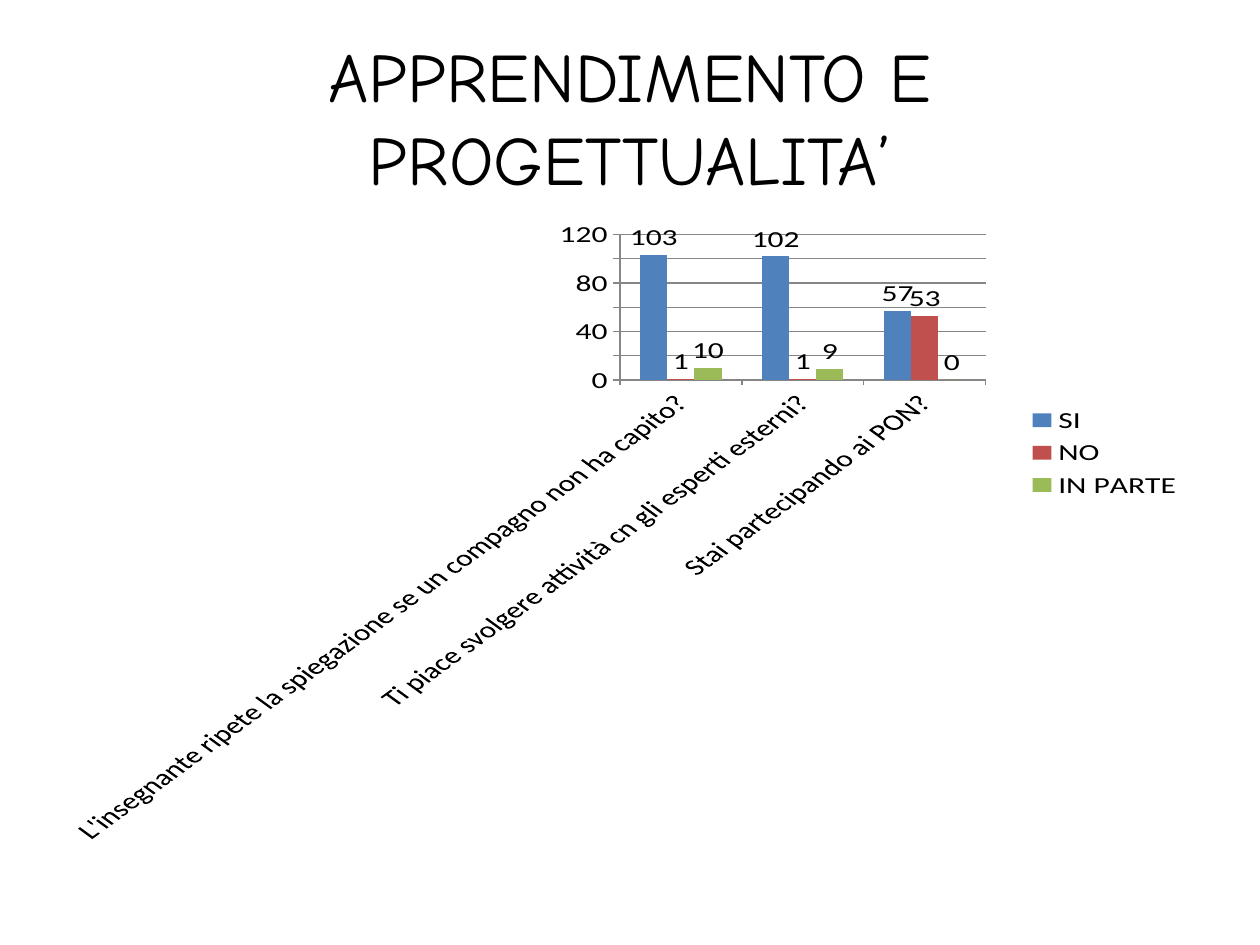
from pptx import Presentation
from pptx.chart.data import CategoryChartData as ChartData
from pptx.dml.color import RGBColor
from pptx.enum.chart import XL_CHART_TYPE as Kind, XL_LABEL_POSITION as Spot
from pptx.enum.chart import XL_LEGEND_POSITION as Side, XL_TICK_MARK as Tick
from pptx.enum.text import MSO_ANCHOR as Anchor, PP_ALIGN as Align
from pptx.util import Cm, Pt

BLACK = RGBColor(0x00, 0x00, 0x00)
GREY = RGBColor(0x86, 0x86, 0x86)
BLUE = RGBColor(0x4F, 0x81, 0xBD)
RED = RGBColor(0xC0, 0x50, 0x4D)
GREEN = RGBColor(0x9B, 0xBB, 0x59)

LEFT, WIDTH = Cm(1.27), Cm(22.86)

ASKS = [
    "L'insegnante ripete la spiegazione se un compagno non ha capito?",
    "Ti piace svolgere attività cn gli esperti esterni?",
    "Stai partecipando ai PON?",
]
REPLIES = [
    ("SI", (103, 102, 57), BLUE),
    ("NO", (1, 1, 53), RED),
    ("IN PARTE", (10, 9, 0), GREEN),
]


def add_title(slide, text):
    box = slide.shapes.add_textbox(LEFT, Cm(0.76), WIDTH, Cm(3.18))
    frame = box.text_frame
    frame.word_wrap = True
    frame.vertical_anchor = Anchor.MIDDLE
    para = frame.paragraphs[0]
    para.alignment = Align.CENTER
    run = para.add_run()
    run.text = text
    run.font.name = "Comic Neue"
    run.font.size = Pt(39.6)
    run.font.color.rgb = BLACK


def style_axis(axis):
    axis.major_tick_mark = Tick.OUTSIDE
    axis.minor_tick_mark = Tick.NONE
    axis.format.line.color.rgb = GREY


def style_bars(bars, color):
    bars.format.fill.solid()
    bars.format.fill.fore_color.rgb = color
    bars.invert_if_negative = False
    tags = bars.data_labels
    tags.show_value = True
    tags.position = Spot.OUTSIDE_END


def add_columns(slide):
    data = ChartData()
    data.categories = ASKS
    for name, vals, _ in REPLIES:
        data.add_series(name, vals)
    chart = slide.shapes.add_chart(
        Kind.COLUMN_CLUSTERED, LEFT, Cm(4.45), WIDTH, Cm(12.57), data
    ).chart
    chart.has_title = False
    chart.font.name = "Calibri"
    chart.font.size = Pt(18)
    chart.font.color.rgb = BLACK

    # Axes and grid
    style_axis(chart.category_axis)
    style_axis(chart.value_axis)
    chart.value_axis.has_major_gridlines = True
    chart.value_axis.major_gridlines.format.line.color.rgb = GREY

    # Columns
    plot = chart.plots[0]
    plot.vary_by_categories = False
    plot.gap_width = 150
    plot.overlap = 0
    for bars, (_, _, color) in zip(plot.series, REPLIES):
        style_bars(bars, color)

    # Legend
    chart.has_legend = True
    chart.legend.position = Side.RIGHT
    chart.legend.include_in_layout = False


def main():
    deck = Presentation()
    deck.slide_width, deck.slide_height = Cm(25.4), Cm(19.05)
    slide = deck.slides.add_slide(deck.slide_layouts[6])
    add_title(slide, "APPRENDIMENTO E PROGETTUALITA’")
    add_columns(slide)
    deck.save("out.pptx")


if __name__ == "__main__":
    main()
